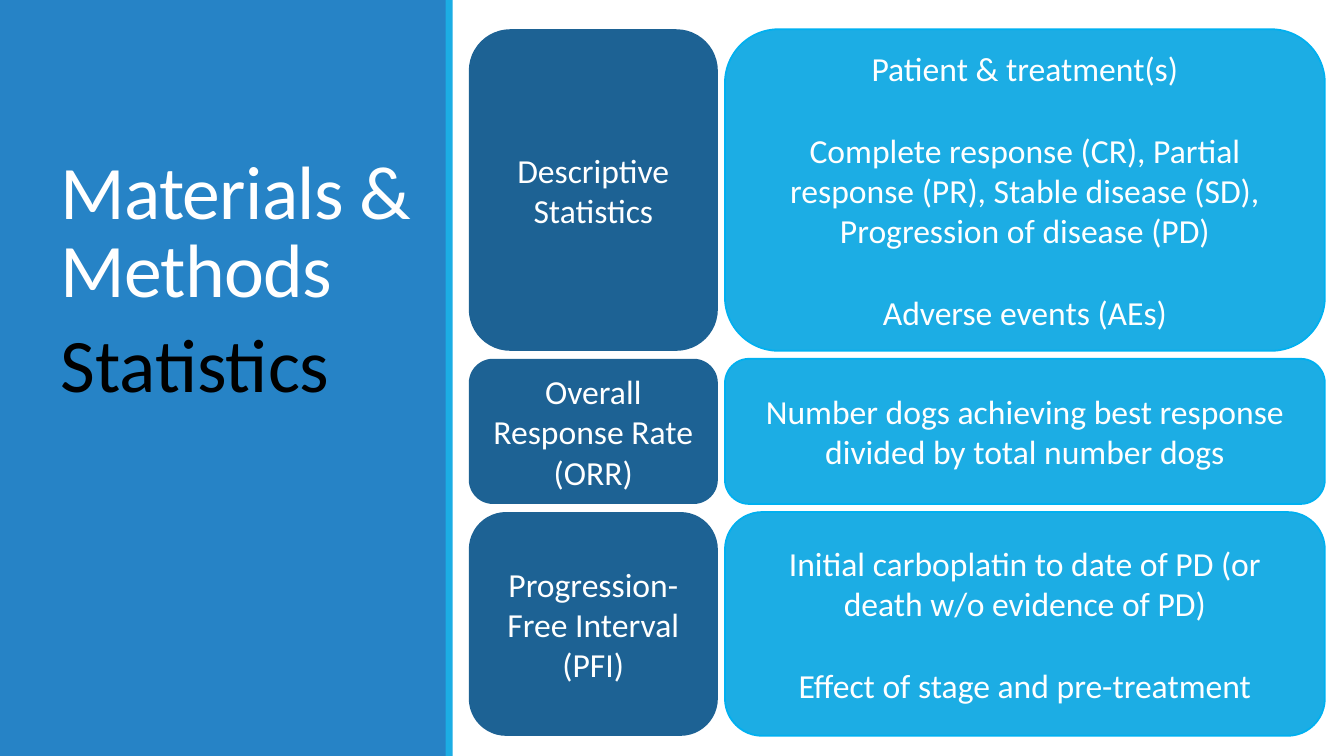
from pptx import Presentation
from pptx.dml.color import RGBColor
from pptx.enum.shapes import MSO_SHAPE
from pptx.enum.text import MSO_ANCHOR, MSO_AUTO_SIZE, PP_ALIGN
from pptx.util import Inches, Pt
from lxml.etree import SubElement
from dataclasses import dataclass

TITLE = "Materials & Methods"
TOPIC = "Statistics"
ROWS = [
    (3.19, ["Descriptive", "Statistics"],
     ["Patient & treatment(s)",
      "Complete response (CR), Partial response (PR), Stable disease (SD), "
      "Progression of disease (PD)",
      "Adverse events (AEs)"]),
    (1.44, ["Overall Response Rate (ORR)"],
     ["Number dogs achieving best response divided by total number dogs"]),
    (2.22, ["Progression-Free Interval (PFI)"],
     ["Initial carboplatin to date of PD (or death w/o evidence of PD)",
      "Effect of stage and pre-treatment"]),
]
PANELS = [(0, 4.43, "2683C6"), (4.42, 0.07, "1CADE4")]
TOP, GAP = 0.29, 0.08
LABEL = (4.65, 2.47)
DETAIL = (7.19, 5.95)


@dataclass
class Theme:
    font: str = "Calibri"
    white: str = "FFFFFF"
    black: str = "000000"
    dark: str = "1D6294"
    light: str = "1CADE4"
    edge: str = "00B0F0"
    head: int = 54
    text: int = 24
    space: float = 29.3


theme = Theme()


def color(code):
    return RGBColor.from_string(code)


def write(par, text, size, code):
    run = par.add_run()
    run.text = text
    run.font.name = theme.font
    run.font.size = Pt(size)
    run.font.color.rgb = color(code)
    return run


def shape(slide, kind, box, fill, edge=None):
    item = slide.shapes.add_shape(kind, *map(Inches, box))
    item.shadow.inherit = False
    item.fill.solid()
    item.fill.fore_color.rgb = color(fill)
    if edge:
        item.line.color.rgb = color(edge)
        item.line.width = Pt(1.25)
    else:
        item.line.fill.background()
    return item


def card(slide, box, lines, fill, edge, inset, space):
    item = shape(slide, MSO_SHAPE.ROUNDED_RECTANGLE, box, fill, edge)
    frame = item.text_frame
    frame.word_wrap = True
    frame.vertical_anchor = MSO_ANCHOR.MIDDLE
    frame.margin_left = frame.margin_right = Inches(inset)
    frame.margin_top = frame.margin_bottom = Inches(0.02)
    for i, line in enumerate(lines):
        par = frame.add_paragraph() if i else frame.paragraphs[0]
        par.alignment = PP_ALIGN.CENTER
        par.space_before = Pt(space if i else 0)
        write(par, line, theme.text, theme.white)


def place(holder, box, anchor, text, code, line):
    holder.left, holder.top, holder.width, holder.height = map(Inches, box)
    frame = holder.text_frame
    frame.word_wrap = True
    frame.auto_size = MSO_AUTO_SIZE.NONE
    frame.vertical_anchor = anchor
    par = frame.paragraphs[0]
    par.alignment = PP_ALIGN.LEFT
    par.line_spacing = line
    return par, write(par, text, theme.head, code)


def main():
    deck = Presentation()
    deck.slide_width, deck.slide_height = Inches(13.33), Inches(7.5)
    slide = deck.slides.add_slide(deck.slide_layouts[1])

    for i, (left, width, fill) in enumerate(PANELS):
        panel = shape(slide, MSO_SHAPE.RECTANGLE, (left, 0, width, 7.5), fill)
        panel.element.getparent().insert(2 + i, panel.element)

    _, run = place(slide.shapes.title, (0.5, 0.65, 3.71, 2.5),
                   MSO_ANCHOR.BOTTOM, TITLE, theme.white, 0.85)
    run.font._element.set("spc", "-50")
    par, _ = place(slide.placeholders[1], (0.5, 3.2, 3.5, 3.7),
                   MSO_ANCHOR.TOP, TOPIC, theme.black, 0.9)
    par.space_before, par.space_after = Pt(12), Pt(2)
    props = par._p.get_or_add_pPr()
    props.set("marL", "0")
    props.set("indent", "0")
    SubElement(props, "{http://schemas.openxmlformats.org/drawingml/2006/main}buNone")

    top = TOP
    for high, label, detail in ROWS:
        card(slide, (DETAIL[0], top, DETAIL[1], high), detail,
             theme.light, theme.edge, 0.2, theme.space)
        card(slide, (LABEL[0], top, LABEL[1], high), label,
             theme.dark, None, 0.1, 0)
        top += high + GAP

    deck.save("out.pptx")


if __name__ == "__main__":
    main()
